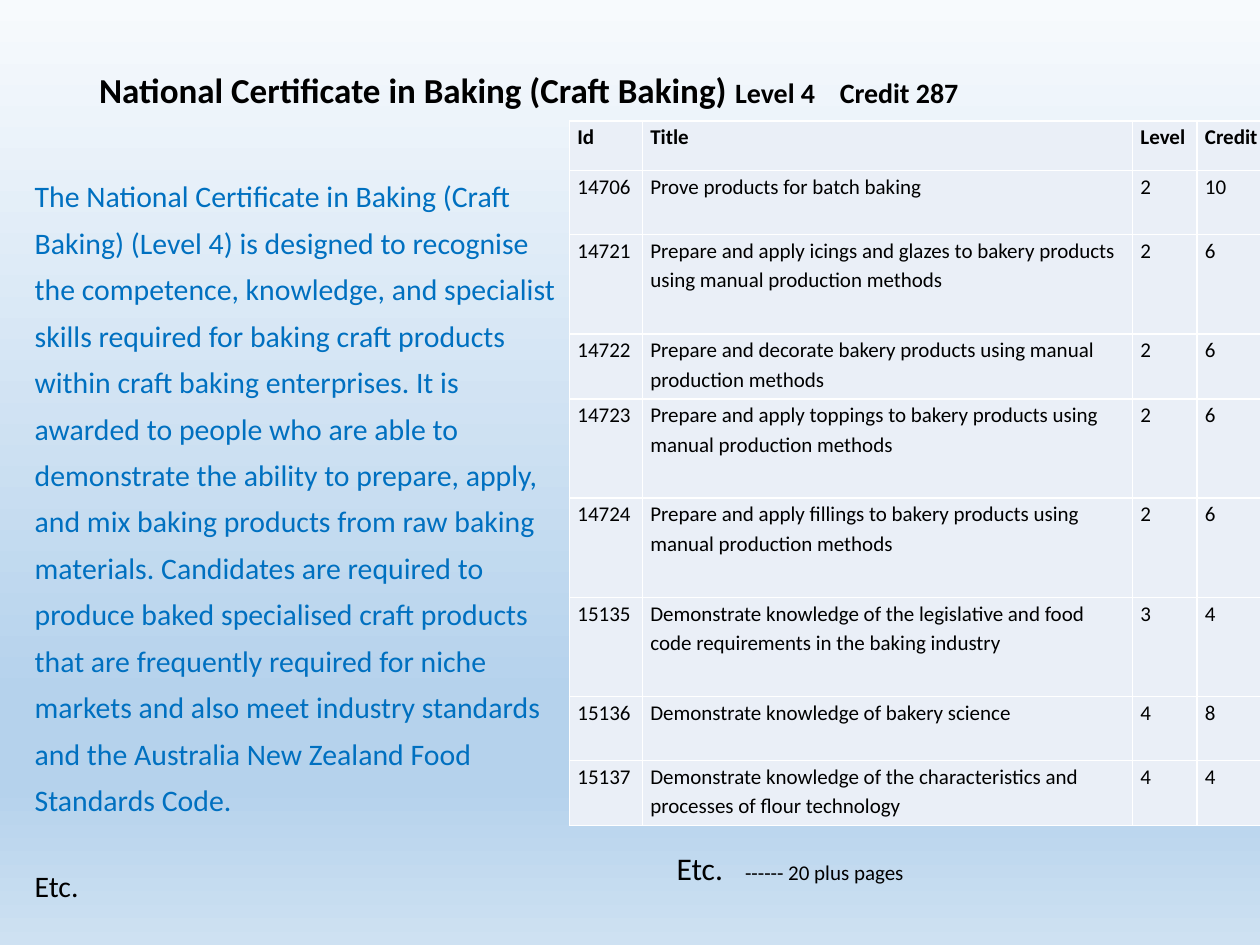
from lxml import etree
from pptx import Presentation
from pptx.dml.color import RGBColor
from pptx.enum.text import MSO_ANCHOR
from pptx.oxml.ns import qn
from pptx.util import Cm, Pt

TOP, MIDDLE = MSO_ANCHOR.TOP, MSO_ANCHOR.MIDDLE
FONT = "Calibri"
BLACK = RGBColor(0x00, 0x00, 0x00)
BLUE = RGBColor(0x00, 0x70, 0xC0)
WHITE = RGBColor(0xFF, 0xFF, 0xFF)
CELL_FILL = RGBColor(0xEA, 0xEF, 0xF7)
SKY_STOPS = [
    (0, RGBColor(0xF7, 0xFA, 0xFD)),
    (74, RGBColor(0xB5, 0xD2, 0xEC)),
    (83, RGBColor(0xB5, 0xD2, 0xEC)),
    (100, RGBColor(0xCE, 0xE1, 0xF2)),
]

DESCRIPTION = (
    "The National Certificate in Baking (Craft Baking) (Level 4) is designed to "
    "recognise the competence, knowledge, and specialist skills required for baking "
    "craft products within craft baking enterprises. It is awarded to people who are "
    "able to demonstrate the ability to prepare, apply, and mix baking products from "
    "raw baking materials. Candidates are required to produce baked specialised craft "
    "products that are frequently required for niche markets and also meet industry "
    "standards and the Australia New Zealand Food Standards Code."
)

COLUMN_WIDTHS = [1.47, 9.88, 1.3, 1.4]
HEADINGS = ("Id", "Title", "Level", "Credit")
HEADING_HEIGHT = 1.0
SHORT, MEDIUM, TALL = 1.29, 1.31, 2.0
UNITS = [
    (SHORT, "14706", "Prove products for batch baking", "2", "10"),
    (TALL, "14721", "Prepare and apply icings and glazes to bakery products "
     "using manual production methods", "2", "6"),
    (MEDIUM, "14722", "Prepare and decorate bakery products using manual "
     "production methods", "2", "6"),
    (TALL, "14723", "Prepare and apply toppings to bakery products using "
     "manual production methods", "2", "6"),
    (TALL, "14724", "Prepare and apply fillings to bakery products using "
     "manual production methods", "2", "6"),
    (TALL, "15135", "Demonstrate knowledge of the legislative and food code "
     "requirements in the baking industry", "3", "4"),
    (SHORT, "15136", "Demonstrate knowledge of bakery science", "4", "8"),
    (MEDIUM, "15137", "Demonstrate knowledge of the characteristics and "
     "processes of flour technology", "4", "4"),
]


def add_solid_color(parent, color):
    etree.SubElement(parent, qn("a:srgbClr"), val=str(color))


def set_background(slide, stops):
    """Fill the background with a gradient running from top to bottom."""
    fill = slide.background.fill
    fill.gradient()
    fill.gradient_angle = 270
    stop_list = slide.element.find(".//" + qn("a:gsLst"))
    for old in list(stop_list):
        stop_list.remove(old)
    for percent, color in stops:
        stop = etree.SubElement(stop_list, qn("a:gs"), pos=str(percent * 1000))
        add_solid_color(stop, color)


def add_run(p, text, size, color=BLACK, bold=False):
    r = p.add_run()
    r.text = text
    r.font.name = FONT
    r.font.size = Pt(size)
    r.font.bold = bold
    r.font.color.rgb = color


def add_text_box(slide, left, top, width, height, anchor=TOP):
    tf = slide.shapes.add_textbox(Cm(left), Cm(top), Cm(width), Cm(height)).text_frame
    tf.word_wrap = True
    tf.vertical_anchor = anchor
    return tf


def add_tab_stop(p, position):
    tabs = etree.SubElement(p._p.get_or_add_pPr(), qn("a:tabLst"))
    etree.SubElement(tabs, qn("a:tab"), pos=str(Cm(position)), algn="l")


def add_title(slide):
    tf = add_text_box(slide, 1.75, 0.3, 21.9, 4.4, MIDDLE)
    tf.margin_bottom = Cm(1.42)
    p = tf.paragraphs[0]
    p.line_spacing = 0.9
    add_tab_stop(p, 14.93)
    add_run(p, "National Certificate in Baking (Craft Baking) ", 20, bold=True)
    add_run(p, "Level 4\tCredit 287", 16, bold=True)


def add_description(slide):
    tf = add_text_box(slide, 0.45, 3.25, 11.02, 15.8)
    p = tf.paragraphs[0]
    p.line_spacing = 1.3
    add_run(p, DESCRIPTION, 17, BLUE)
    p = tf.add_paragraph()
    p.line_spacing = 0.7
    p.space_before = Pt(34.5)
    add_run(p, "Etc.", 17)


def add_page_note(slide):
    p = add_text_box(slide, 13.39, 17, 11.35, 1.02).paragraphs[0]
    add_tab_stop(p, 1.38)
    add_run(p, "Etc.\t", 18)
    add_run(p, "------ 20 plus pages", 12)


def set_borders(cell, color, width):
    properties = cell._tc.get_or_add_tcPr()
    for position, side in enumerate(("a:lnL", "a:lnR", "a:lnT", "a:lnB")):
        line = etree.Element(qn(side), w=str(Pt(width)))
        add_solid_color(etree.SubElement(line, qn("a:solidFill")), color)
        properties.insert(position, line)


def fill_cell(cell, text, bold):
    cell.fill.solid()
    cell.fill.fore_color.rgb = CELL_FILL
    cell.margin_left = cell.margin_right = Cm(0.16)
    cell.margin_top = cell.margin_bottom = 0
    set_borders(cell, WHITE, 1)
    p = cell.text_frame.paragraphs[0]
    p.line_spacing = 1.15
    p.space_after = Pt(10)
    add_run(p, text, 12, bold=bold)


def add_unit_table(slide):
    rows = [(HEADING_HEIGHT, *HEADINGS), *UNITS]
    width = sum(COLUMN_WIDTHS)
    height = sum(row[0] for row in rows)
    table = slide.shapes.add_table(len(rows), len(HEADINGS), Cm(11.48), Cm(2.44),
                                   Cm(width), Cm(height)).table
    table.first_row = False
    table.horz_banding = False
    for column, column_width in zip(table.columns, COLUMN_WIDTHS):
        column.width = Cm(column_width)
    for i, (row_height, *texts) in enumerate(rows):
        table.rows[i].height = Cm(row_height)
        for j, text in enumerate(texts):
            fill_cell(table.cell(i, j), text, bold=i == 0)


def main():
    prs = Presentation()
    prs.slide_width, prs.slide_height = Cm(25.4), Cm(19.05)
    slide = prs.slides.add_slide(prs.slide_layouts[6])
    set_background(slide, SKY_STOPS)
    add_title(slide)
    add_description(slide)
    add_unit_table(slide)
    add_page_note(slide)
    prs.save("out.pptx")


if __name__ == "__main__":
    main()
